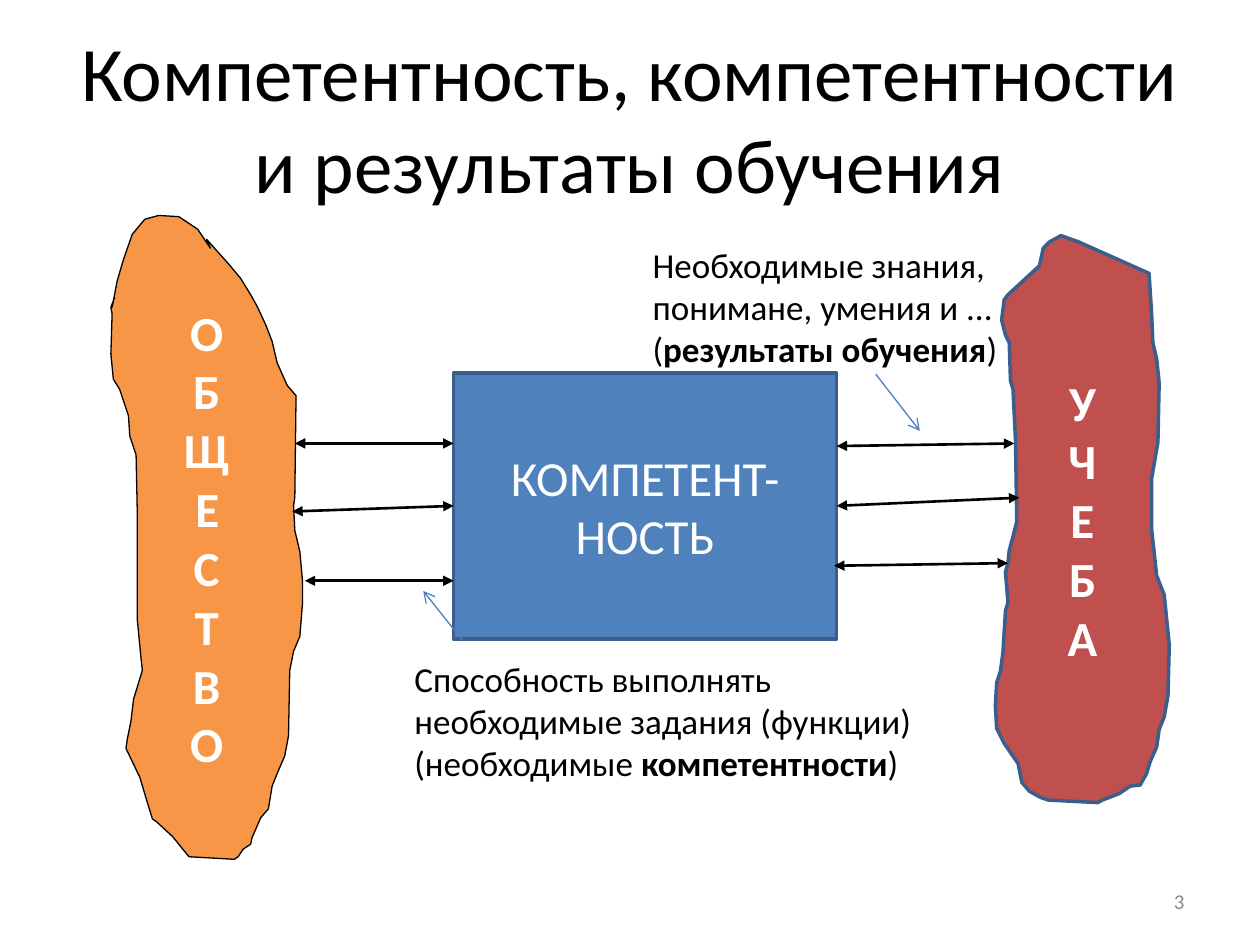
"""Build the slide on competence, competences and learning outcomes."""
from lxml import etree
from pptx import Presentation
from pptx import util as u
from pptx.dml.color import RGBColor
from pptx.enum import shapes, text
from pptx.oxml.ns import qn

THEME = {
    "font": "Calibri",
    "black": "000000", "white": "FFFFFF", "grey": "8C8C8C",
    "orange": "F79646", "red": "C0504D", "blue": "4F81BD",
    "edge": "3A5F8C", "pointer": "4B7EBC",
    "title": 44, "label": 28, "note": 20, "number": 12,
}
GRID = 0.72

TITLE = ("Компетентность, компетентности и результаты обучения", (36, 21.6, 648, 90))
CENTRE = ("КОМПЕТЕНТ-НОСТЬ", (259.2, 213.1, 218.9, 152))
NUMBER = ("3", (516.2, 500.4, 167.8, 28.8))

SOCIETY = [
    (89, 244), (93, 223), (98, 206), (105, 186), (115, 174), (126, 171), (142, 172),
    (145, 174), (157, 182), (167, 197), (164, 190), (181, 209), (191, 221), (199, 234),
    (204, 243), (211, 258), (216, 271), (220, 288), (228, 306), (235, 314), (234, 395),
    (233, 401), (234, 421), (238, 438), (240, 460), (240, 480), (238, 505), (233, 517),
    (230, 532), (229, 584), (226, 600), (220, 614), (216, 624), (213, 642), (207, 649),
    (200, 665), (199, 670), (193, 674), (189, 680), (186, 682), (150, 680), (137, 664),
    (124, 652), (121, 650), (117, 637), (111, 617), (100, 594), (101, 587), (104, 572),
    (106, 555), (113, 532), (112, 523), (109, 492), (109, 408), (108, 361), (103, 346),
    (102, 330), (95, 309), (90, 301), (88, 281), (89, 249), (88, 244), (91, 236),
]
STUDY = [
    (797, 238), (800, 234), (825, 211), (828, 197), (833, 192), (842, 187), (856, 192),
    (912, 217), (914, 249), (915, 272), (918, 285), (920, 304), (919, 351), (914, 380),
    (914, 420), (918, 457), (924, 472), (928, 512), (927, 552), (924, 569), (920, 579),
    (918, 593), (913, 604), (910, 614), (905, 623), (897, 624), (888, 630), (875, 635),
    (871, 637), (832, 635), (826, 633), (817, 628), (811, 621), (808, 606), (797, 590),
    (791, 578), (790, 560), (791, 542), (794, 533), (796, 518), (798, 485), (800, 478),
    (798, 454), (800, 447), (801, 437), (804, 426), (807, 414), (806, 350), (804, 309),
    (802, 302), (801, 272), (798, 266), (795, 254),
]
BLOBS = [
    ("ОБЩЕСТВО", SOCIETY, False, "orange", "black", 0.75),
    ("УЧЕБА", STUDY, True, "red", "edge", 2),
]

LINKS = [
    ((167, 292.3), (259.2, 289.1), 1),
    ((168.5, 253.4), (259.2, 253.4), None),
    ((174.2, 331.9), (259.2, 331.9), None),
    ((582.5, 284.4), (478.1, 289.1), 3),
    ((579.6, 253.4), (478.1, 254.9), None),
    ((576, 321.8), (476.6, 323.3), None),
]
POINTERS = [((500.4, 213.8), (525.6, 246.2)), ((264.2, 365.8), (241.9, 337.7))]

NOTES = [
    ((229.7, 372.2, 306, 79.9), [
        [("Способность выполнять", False)],
        [("необходимые задания (функции)", False)],
        [("(необходимые ", False), ("компетентности", True), (")", False)],
    ]),
    ((365.8, 135.4, 216.7, 79.9), [
        [("Необходимые знания,", False)],
        [("понимане, умения и ...", False)],
        [("(", False), ("результаты обучения", True), (")", False)],
    ]),
]


def pts(values):
    return [u.Pt(v) for v in values]


def colour(name):
    return RGBColor.from_string(THEME[name])


def style_run(r, size, fill, bold=False):
    r.font.name, r.font.size, r.font.bold = THEME["font"], u.Pt(THEME[size]), bold
    r.font.color.rgb = colour(fill)


def write(sp, words, size, fill, align, bold=False):
    tf = sp.text_frame
    tf.text = words
    tf.word_wrap = True
    tf.vertical_anchor = text.MSO_ANCHOR.MIDDLE
    p = tf.paragraphs[0]
    p.alignment = align
    style_run(p.runs[0], size, fill, bold)


def paint(sp, fill, line, width):
    sp.shadow.inherit = False
    sp.fill.solid()
    sp.fill.fore_color.rgb = colour(fill)
    sp.line.color.rgb = colour(line)
    sp.line.width = u.Pt(width)


def add_blob(s, words, outline, closed, fill, line, width):
    builder = s.shapes.build_freeform(*outline[0], scale=u.Pt(GRID))
    builder.add_line_segments(outline[1:], close=closed)
    sp = builder.convert_to_shape()
    paint(sp, fill, line, width)
    write(sp, words, "label", "white", text.PP_ALIGN.CENTER, True)
    sp.text_frame._txBody.bodyPr.set("vert", "wordArtVert")


def add_arrow(s, start, end, line, width, heads):
    cx = s.shapes.add_connector(shapes.MSO_CONNECTOR.STRAIGHT, *pts(start + end))
    cx.line.color.rgb = colour(line)
    cx.line.width = u.Pt(width)
    ln = cx.line._get_or_add_ln()
    for tag, kind in heads:
        etree.SubElement(ln, qn(tag)).set("type", kind)
    etree.SubElement(cx._element.spPr, qn("a:effectLst"))
    return cx


def add_note(s, box, lines):
    tf = s.shapes.add_textbox(*pts(box)).text_frame
    tf.word_wrap = False
    tf.auto_size = text.MSO_AUTO_SIZE.SHAPE_TO_FIT_TEXT
    for i, line in enumerate(lines):
        p = tf.add_paragraph() if i else tf.paragraphs[0]
        for words, bold in line:
            r = p.add_run()
            r.text = words
            style_run(r, "note", "black", bold)


def main():
    prs = Presentation()
    prs.slide_width, prs.slide_height = pts((720, 540))
    s = prs.slides.add_slide(prs.slide_layouts[5])

    words, box = TITLE
    title = s.shapes.title
    title.left, title.top, title.width, title.height = pts(box)
    write(title, words, "title", "black", text.PP_ALIGN.CENTER)

    for blob in BLOBS:
        add_blob(s, *blob)

    words, box = CENTRE
    centre = s.shapes.add_shape(shapes.MSO_SHAPE.RECTANGLE, *pts(box))
    paint(centre, "blue", "edge", 2)
    write(centre, words, "label", "white", text.PP_ALIGN.CENTER)

    both = [("a:headEnd", "triangle"), ("a:tailEnd", "triangle")]
    for start, end, side in LINKS:
        cx = add_arrow(s, start, end, "black", 1.5, both)
        if side is not None:
            cx.end_connect(centre, side)
    for note in NOTES:
        add_note(s, *note)
    for start, end in POINTERS:
        add_arrow(s, start, end, "pointer", 0.75, [("a:tailEnd", "arrow")])

    words, box = NUMBER
    number = s.shapes.add_textbox(*pts(box))
    write(number, words, "number", "grey", text.PP_ALIGN.RIGHT)
    prs.save("out.pptx")


if __name__ == "__main__":
    main()
